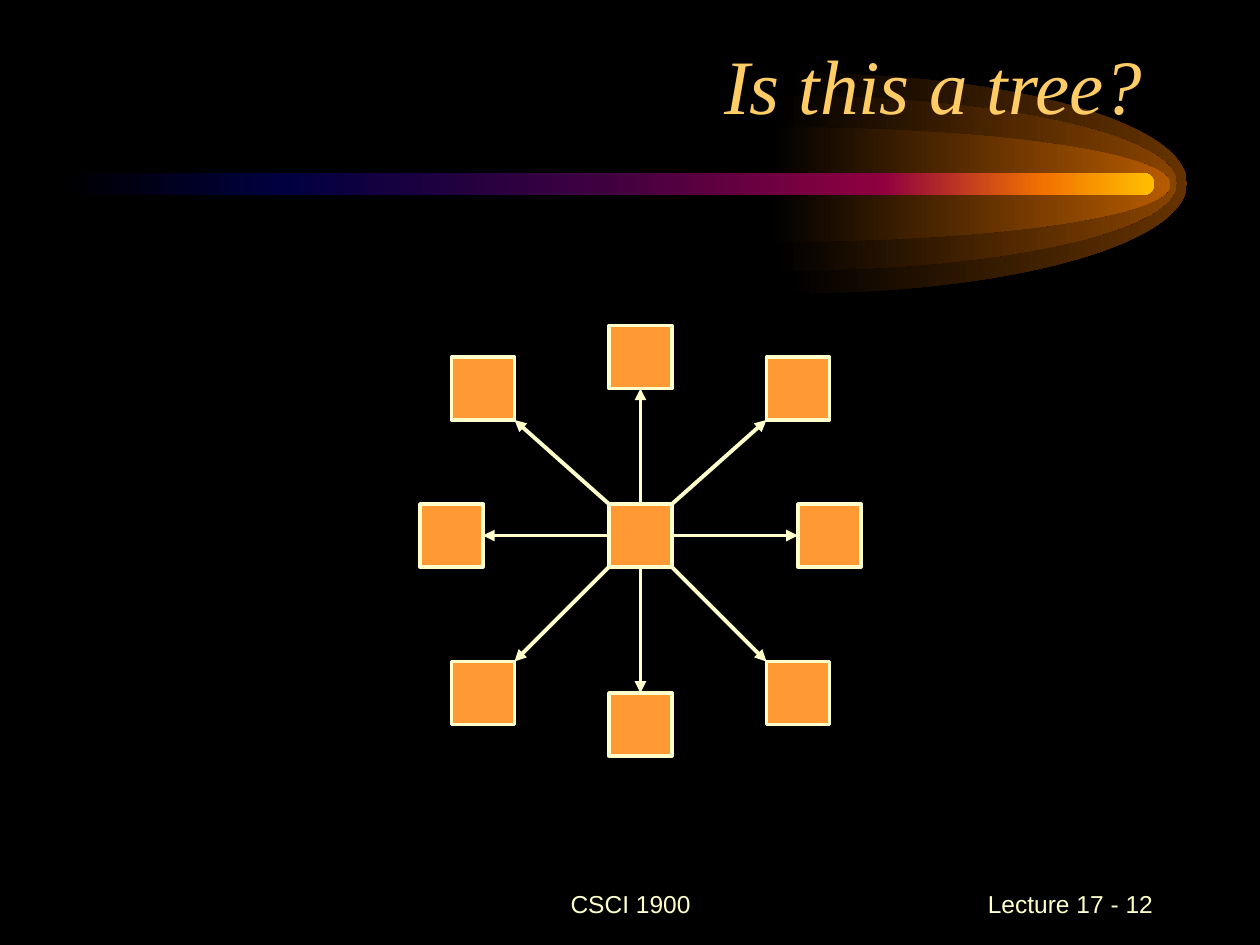
import pptx
import pptx.util
from lxml import etree
from pptx.dml.color import RGBColor
from pptx.enum.shapes import MSO_CONNECTOR, MSO_SHAPE
from pptx.enum.text import MSO_ANCHOR, PP_ALIGN
from pptx.oxml.ns import qn
from pptx.util import Inches

COLORS = {"background": "000000", "title": "FFCC66", "cream": "FFFFCC", "node": "FF9933"}


def fill_gradient(shape, stops):
    """Fill a shape left to right with (percent, colour) stops and no outline."""
    shape.shadow.inherit = False
    shape.line.fill.background()
    shape.fill.gradient()
    shape.fill.gradient_angle = 0
    stop_list = shape.element.spPr.find(qn("a:gradFill")).find(qn("a:gsLst"))
    for stop in list(stop_list):
        stop_list.remove(stop)
    for percent, color in stops:
        stop = etree.SubElement(stop_list, qn("a:gs"), pos=str(percent * 1000))
        etree.SubElement(stop, qn("a:srgbClr"), val=color)


def format_text(shape, text, alignment, anchor, font_name, size, color):
    frame = shape.text_frame
    frame.word_wrap = True
    frame.vertical_anchor = anchor
    frame.text = text
    paragraph = frame.paragraphs[0]
    paragraph.alignment = alignment
    paragraph.font.name = font_name
    paragraph.font.size = pptx.util.Pt(size)
    paragraph.font.color.rgb = RGBColor.from_string(COLORS[color])
    return paragraph


presentation = pptx.Presentation()
presentation.slide_width = Inches(10)
presentation.slide_height = Inches(7.5)
slide = presentation.slides.add_slide(presentation.slide_layouts[5])
slide.background.fill.solid()
slide.background.fill.fore_color.rgb = RGBColor.from_string(COLORS["background"])

# Comet: three half-ellipse glows and a tail
glow_width, overhang = 3.13, 0.05
for center_x, top, height, color in [
    (6.29, 0.58, 1.75, "663300"), (6.21, 0.76, 1.39, "894400"), (6.16, 1.01, 0.91, "B75B00")
]:
    builder = slide.shapes.build_freeform(Inches(center_x), Inches(top))
    builder.add_line_segments([
        (Inches(center_x + glow_width), Inches(top + height / 2)),
        (Inches(center_x - overhang), Inches(top + height)),
        (Inches(center_x), Inches(top + height / 2)),
    ])
    glow = builder.convert_to_shape()
    # Round the first two segments: each gets two control points before its end
    near, far = 0.45, 0.55
    controls = [
        [(overhang + far * glow_width, 0), (overhang + glow_width, near / 2 * height)],
        [(overhang + glow_width, (1 + far) / 2 * height), (overhang + far * glow_width, height)],
    ]
    segments = list(glow.element.spPr.iter(qn("a:lnTo")))
    for segment, control_points in zip(segments, controls):
        segment.tag = qn("a:cubicBezTo")
        for index, (x, y) in enumerate(control_points):
            point = etree.Element(qn("a:pt"), x=str(Inches(x)), y=str(Inches(y)))
            segment.insert(index, point)
    fill_gradient(glow, [(0, "000000"), (100, color)])

tail = slide.shapes.add_shape(
    MSO_SHAPE.ROUNDED_RECTANGLE, Inches(0.5), Inches(1.37), Inches(8.66), Inches(0.18))
tail.adjustments[0] = 0.5
fill_gradient(tail, [(0, "000000"), (20, "000040"), (50, "400040"),
                     (75, "8F0040"), (90, "F27300"), (100, "FFBF00")])

# Footer
for text, left, width, alignment in [
    ("CSCI 1900", 3.42, 3.17, PP_ALIGN.CENTER),
    ("Lecture 17 - 12", 7.17, 2.08, PP_ALIGN.RIGHT),
]:
    box = slide.shapes.add_textbox(Inches(left), Inches(6.92), Inches(width), Inches(0.5))
    format_text(box, text, alignment, MSO_ANCHOR.MIDDLE, "Arial", 14, "cream")

# Title, brought in front of the comet
title = slide.shapes.title
title.left, title.top = Inches(0.67), Inches(0.25)
title.width, title.height = Inches(8.5), Inches(0.83)
paragraph = format_text(title, "Is this a tree?", PP_ALIGN.RIGHT, MSO_ANCHOR.BOTTOM,
                        "Times New Roman", 44, "title")
paragraph.font.italic = True
slide.shapes.element.append(title.element)

# Nodes, keyed by their direction (x, y) from the hub, with centres in grid units
unit = Inches(1) // 12
half = 3
hub = (0, 0)
centers = {
    hub: (61, 51),
    (-1, 0): (43, 51), (-1, -1): (46, 37), (0, -1): (61, 34),
    (-1, 1): (46, 66), (0, 1): (61, 69),
    (1, 0): (79, 51), (1, -1): (76, 37), (1, 1): (76, 66),
}
nodes = {}
for direction, (x, y) in centers.items():
    node = slide.shapes.add_shape(
        MSO_SHAPE.RECTANGLE, (x - half) * unit, (y - half) * unit,
        2 * half * unit, 2 * half * unit)
    node.shadow.inherit = False
    node.fill.solid()
    node.fill.fore_color.rgb = RGBColor.from_string(COLORS["node"])
    node.line.color.rgb = RGBColor.from_string(COLORS["cream"])
    node.line.width = pptx.util.Pt(2)
    nodes[direction] = node

# Arrows from the hub to every other node
sites = {(0, -1): 0, (-1, 0): 1, (0, 1): 2, (1, 0): 3}
hub_x, hub_y = centers[hub]
for direction in [(-1, 0), (-1, -1), (0, -1), (1, -1), (1, 0), (1, 1), (0, 1), (-1, 1)]:
    x, y = centers[direction]
    shift_x, shift_y = direction[0] * half, direction[1] * half
    arrow = slide.shapes.add_connector(
        MSO_CONNECTOR.STRAIGHT, (hub_x + shift_x) * unit, (hub_y + shift_y) * unit,
        (x - shift_x) * unit, (y - shift_y) * unit)
    if direction in sites:
        arrow.begin_connect(nodes[hub], sites[direction])
        arrow.end_connect(nodes[direction], (sites[direction] + 2) % 4)
    arrow.line.color.rgb = RGBColor.from_string(COLORS["cream"])
    arrow.line.width = pptx.util.Pt(2.25)
    properties = arrow.element.spPr
    etree.SubElement(properties.find(qn("a:ln")), qn("a:tailEnd"), type="triangle")
    etree.SubElement(properties, qn("a:effectLst"))

presentation.save("out.pptx")
